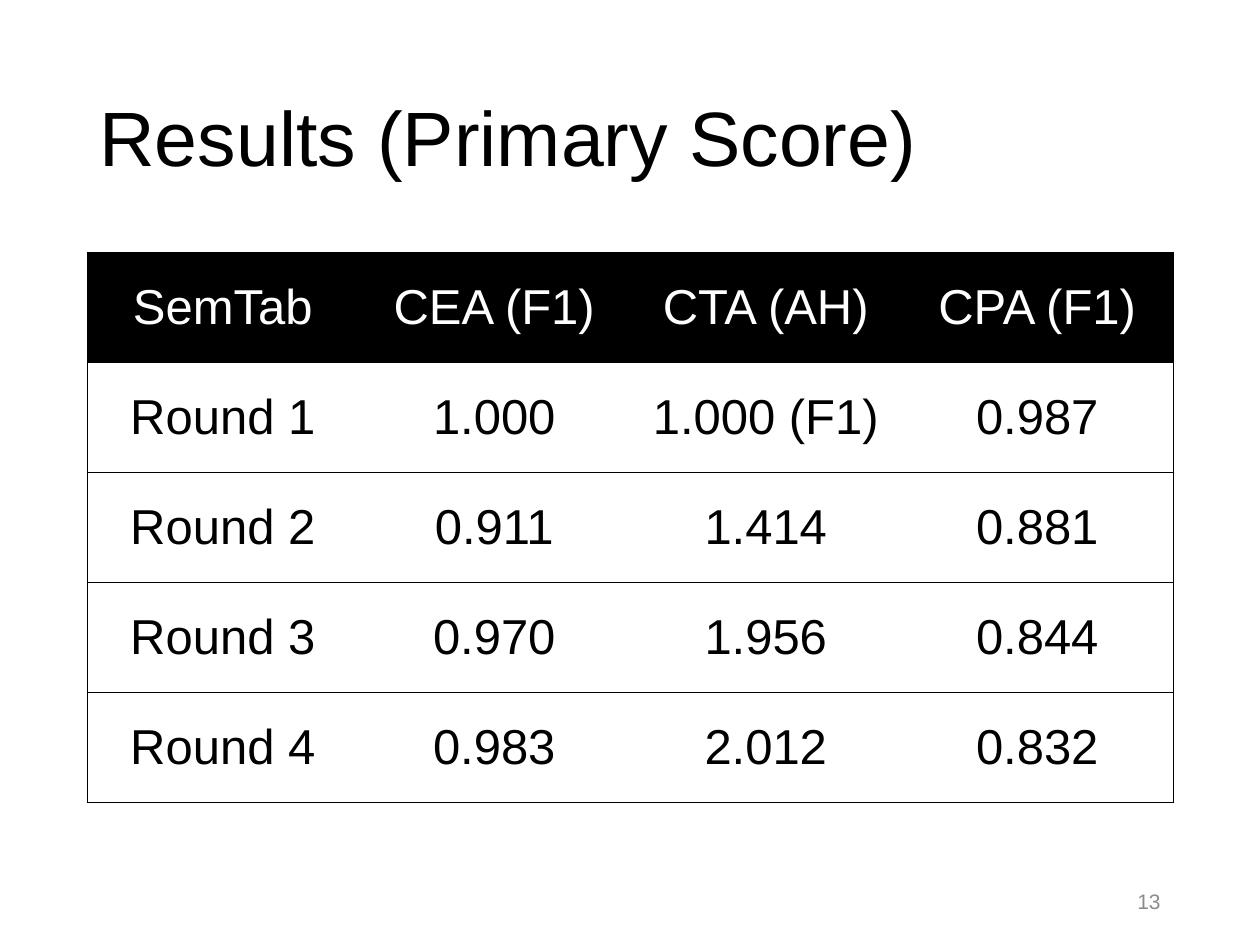
from lxml import etree
from pptx import Presentation
from pptx.dml.color import RGBColor
from pptx.enum.text import MSO_ANCHOR, PP_ALIGN
from pptx.oxml.ns import qn
from pptx.util import Inches, Pt

MIDDLE = MSO_ANCHOR.MIDDLE
LEFT, CENTER, RIGHT = PP_ALIGN.LEFT, PP_ALIGN.CENTER, PP_ALIGN.RIGHT
COLORS = {"black": "000000", "white": "FFFFFF", "gray": "8C8C8C"}
RESULTS = [
    ["SemTab", "CEA (F1)", "CTA (AH)", "CPA (F1)"],
    ["Round 1", "1.000", "1.000 (F1)", "0.987"],
    ["Round 2", "0.911", "1.414", "0.881"],
    ["Round 3", "0.970", "1.956", "0.844"],
    ["Round 4", "0.983", "2.012", "0.832"],
]
ROW_COUNT, COLUMN_COUNT = len(RESULTS), len(RESULTS[0])
MARGIN, CONTENT_WIDTH = 0.69, 8.62


def write_text(text_frame, text, size, color, alignment):
    text_frame.text = text
    text_frame.word_wrap = True
    text_frame.vertical_anchor = MIDDLE
    paragraph = text_frame.paragraphs[0]
    paragraph.alignment = alignment
    paragraph.font.name = "Arial"
    paragraph.font.size = Pt(size)
    paragraph.font.color.rgb = RGBColor.from_string(COLORS[color])
    return paragraph


def set_border(cell, side, visible):
    """Give one side (L, R, T or B) a thin black line, or none."""
    properties = cell._tc.get_or_add_tcPr()
    line = etree.SubElement(properties, qn(f"a:ln{side}"), w=str(Pt(0.5)))
    if visible:
        fill = etree.SubElement(line, qn("a:solidFill"))
        etree.SubElement(fill, qn("a:srgbClr"), val=COLORS["black"])
    else:
        etree.SubElement(line, qn("a:noFill"))


presentation = Presentation()
presentation.slide_width = Inches(10)
presentation.slide_height = Inches(7.5)
slide = presentation.slides.add_slide(presentation.slide_layouts[6])

title = slide.shapes.add_textbox(
    Inches(MARGIN), Inches(0.4), Inches(CONTENT_WIDTH), Inches(1.45))
title_paragraph = write_text(
    title.text_frame, "Results (Primary Score)", 44, "black", LEFT)
title_paragraph.line_spacing = 0.9

table = slide.shapes.add_table(
    ROW_COUNT, COLUMN_COUNT,
    Inches(MARGIN), Inches(2), Inches(CONTENT_WIDTH), Inches(4.37)).table
table.horz_banding = False

for row_index, row in enumerate(RESULTS):
    is_header = row_index == 0
    for column_index, text in enumerate(row):
        cell = table.cell(row_index, column_index)
        set_border(cell, "L", column_index == 0)
        set_border(cell, "R", column_index == COLUMN_COUNT - 1)
        set_border(cell, "T", True)
        set_border(cell, "B", True)
        cell.fill.solid()
        cell.fill.fore_color.rgb = RGBColor.from_string(
            COLORS["black" if is_header else "white"])
        paragraph = write_text(
            cell.text_frame, text, 28, "white" if is_header else "black", CENTER)
        paragraph.font.bold = False
        cell.vertical_anchor = MIDDLE

page_number = slide.shapes.add_textbox(
    Inches(7.06), Inches(6.95), Inches(2.25), Inches(0.4))
write_text(page_number.text_frame, "13", 12, "gray", RIGHT)

presentation.save("out.pptx")
